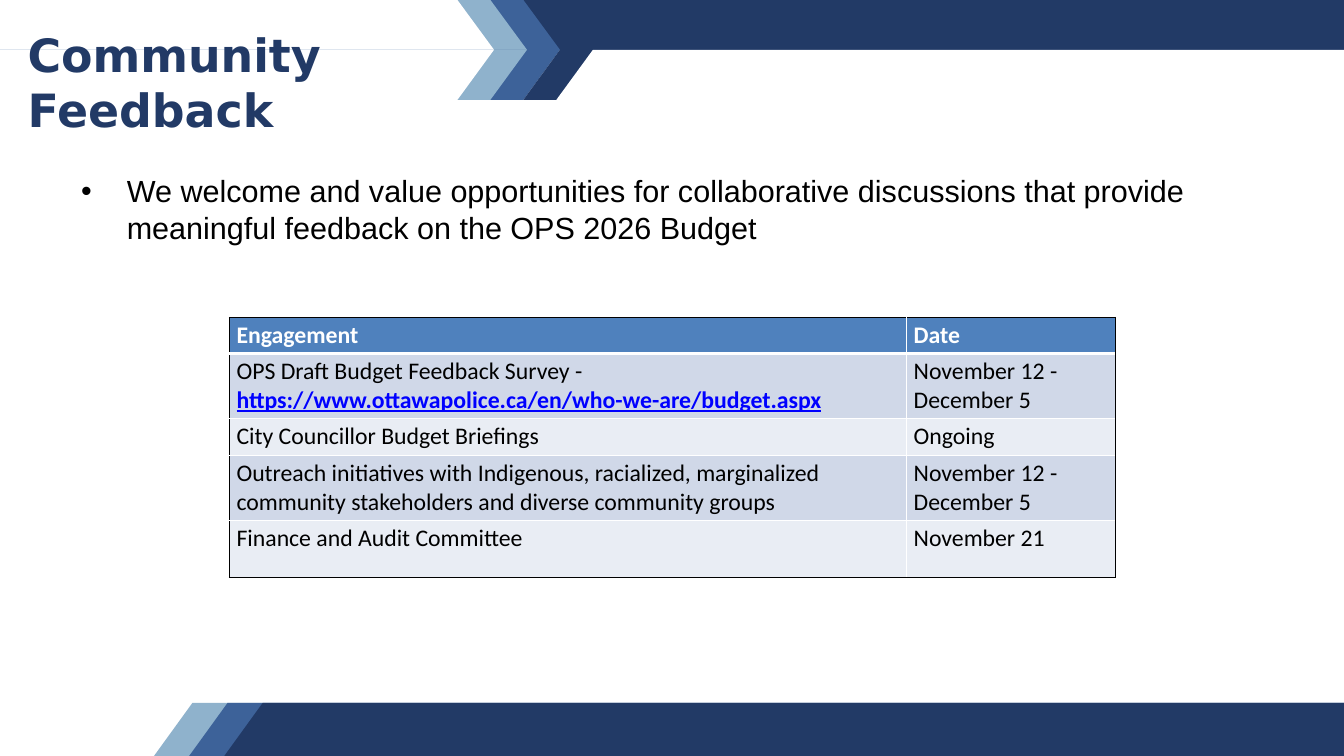
from dataclasses import dataclass

from lxml import etree
from pptx import Presentation
from pptx import util as u
from pptx.dml.color import RGBColor
from pptx.enum import text
from pptx.oxml import ns


@dataclass(frozen=True)
class Theme:
    navy: str = "223A66"
    blue: str = "3D6299"
    sky: str = "8FB2CC"
    white: str = "FFFFFF"
    black: str = "000000"
    link: str = "0000FF"
    header: str = "4F81BD"
    stripes: tuple = ("E9EDF4", "D0D8E8")
    title_size: int = 54
    body_size: int = 36
    table_size: int = 28


THEME = Theme()
WIDTH, HEIGHT = 55.85, 31.42
URL = "https://www.ottawapolice.ca/en/who-we-are/budget.aspx"
SURVEY_DATES = "November 12 - December 5"
ROWS = [
    ("Engagement", "Date"),
    ("OPS Draft Budget Feedback Survey - " + URL, SURVEY_DATES),
    ("City Councillor Budget Briefings", "Ongoing"),
    ("Outreach initiatives with Indigenous, racialized, marginalized "
     "community stakeholders and diverse community groups", SURVEY_DATES),
    ("Finance and Audit Committee", "November 21"),
]
COLUMN_WIDTHS = (28.14, 8.66)
ROW_HEIGHTS = (1.47, 2.64, 1.47, 2.64, 2.39)


def set_all(target, values):
    for name, value in values.items():
        setattr(target, name, value)


def add_span(para, words, font, size, color, **extra):
    span = para.add_run()
    span.text = words
    set_all(span.font, {"name": font, "size": u.Pt(size), **extra})
    span.font.color.rgb = RGBColor.from_string(color)


def place(box, left, top, width, height):
    set_all(box, {"left": u.Cm(left), "top": u.Cm(top),
                  "width": u.Cm(width), "height": u.Cm(height)})


def add_band(slide, top, bottom, left_edge, right_edge, color):
    """Draw a band; each edge is its x at the top and at the bottom."""
    corners = [(left_edge[0], top), (right_edge[0], top),
               (right_edge[1], bottom), (left_edge[1], bottom)]
    points = [(u.Cm(x), u.Cm(y)) for x, y in corners]
    builder = slide.shapes.build_freeform(*points[0], scale=1.0)
    builder.add_line_segments(points[1:], close=True)
    band = builder.convert_to_shape()
    band.shadow.inherit = False
    band.fill.solid()
    band.fill.fore_color.rgb = RGBColor.from_string(color)
    band.line.fill.background()


def add_artwork(slide):
    slant, step, middle, low = 1.52, 1.37, 2.07, 4.15
    tip = 23.27
    start, end = (0, 0), (WIDTH, WIDTH)
    layers = [THEME.blue, THEME.sky, THEME.white]

    # Footer bands
    for index, color in enumerate((THEME.sky, THEME.blue, THEME.navy)):
        left = 6.4 + 1.46 * index
        add_band(slide, 29.21, HEIGHT, (left + 1.6, left), end, color)

    # Upper half of the header arrow
    add_band(slide, 0, middle, (13.26, 14.76), end, THEME.navy)
    for index, color in enumerate(layers):
        x = tip - step * index
        add_band(slide, 0, middle, start, (x - slant, x), color)

    # Lower half of the header arrow
    for index, color in enumerate(layers):
        x = tip - step * index
        add_band(slide, middle, low, start, (x, x - slant), color)
    for index, color in enumerate((THEME.navy, THEME.white)):
        x = tip + step * index
        add_band(slide, middle, low, (x, x - slant), end, color)


def add_title(slide):
    title = slide.shapes.title
    tree = title.element.getparent()
    tree.append(title.element)  # in front of the artwork
    place(title, 0.89, 0.99, 21.84, 2.77)
    frame = title.text_frame
    set_all(frame, {"word_wrap": True, "auto_size": text.MSO_AUTO_SIZE.NONE,
                    "vertical_anchor": text.MSO_ANCHOR.TOP})
    para = frame.paragraphs[0]
    para.alignment = text.PP_ALIGN.LEFT
    add_span(para, "Community Feedback", "DejaVu Sans", THEME.title_size,
             THEME.navy, bold=True)


def add_bullet_text(slide, words):
    box = slide.shapes.add_textbox(0, 0, 0, 0)
    place(box, 3.12, 7.04, 50.42, 3.33)
    box.text_frame.word_wrap = True
    para = box.text_frame.paragraphs[0]
    props = para._p.get_or_add_pPr()
    indent = u.Cm(1.9)
    props.set("marL", str(indent))
    props.set("indent", str(-indent))
    etree.SubElement(props, ns.qn("a:buFont"), typeface="Arial")
    etree.SubElement(props, ns.qn("a:buChar"), char="•")
    add_span(para, words, "Arial", THEME.body_size, THEME.black)


def add_border(cell, side, color, points):
    line = etree.SubElement(cell._tc.get_or_add_tcPr(), ns.qn("a:ln" + side),
                            w=str(u.Pt(points)))
    fill = etree.SubElement(line, ns.qn("a:solidFill"))
    etree.SubElement(fill, ns.qn("a:srgbClr"), val=color)


def format_cell(cell, row, column):
    set_all(cell, {"margin_left": u.Cm(0.3), "margin_right": u.Cm(0.3),
                   "margin_top": u.Cm(0.15), "margin_bottom": u.Cm(0.15)})
    # Black outside, white inside, thicker below the header
    outside = {"L": column == 0, "R": column == len(COLUMN_WIDTHS) - 1,
               "T": row == 0, "B": row == len(ROWS) - 1}
    for side, is_outside in outside.items():
        under_header = (row, side) in ((0, "B"), (1, "T"))
        add_border(cell, side, THEME.black if is_outside else THEME.white,
                   3 if under_header else 1)
    cell.fill.solid()
    color = THEME.stripes[row % 2] if row else THEME.header
    cell.fill.fore_color.rgb = RGBColor.from_string(color)


def add_engagement_table(slide):
    frame = slide.shapes.add_table(
        len(ROWS), len(COLUMN_WIDTHS), u.Cm(9.53), u.Cm(13.18),
        u.Cm(sum(COLUMN_WIDTHS)), u.Cm(sum(ROW_HEIGHTS)))
    table = frame.table
    for column, width in zip(table.columns, COLUMN_WIDTHS):
        column.width = u.Cm(width)
    for row, height in zip(table.rows, ROW_HEIGHTS):
        row.height = u.Cm(height)
    for row, entries in enumerate(ROWS):
        for column, words in enumerate(entries):
            cell = table.cell(row, column)
            format_cell(cell, row, column)
            para = cell.text_frame.paragraphs[0]
            plain, url, _ = words.partition(URL)
            add_span(para, plain, "Calibri", THEME.table_size,
                     THEME.black if row else THEME.white, bold=row == 0)
            if url:
                add_span(para, url, "Calibri", THEME.table_size, THEME.link,
                         bold=True, underline=True)


def main():
    deck = Presentation()
    set_all(deck, {"slide_width": u.Cm(WIDTH), "slide_height": u.Cm(HEIGHT)})
    page = deck.slides.add_slide(deck.slide_layouts[5])
    add_artwork(page)
    add_engagement_table(page)
    add_bullet_text(page, "We welcome and value opportunities for collaborative "
                          "discussions that provide meaningful feedback on the "
                          "OPS 2026 Budget")
    add_title(page)
    deck.save("out.pptx")


if __name__ == "__main__":
    main()
